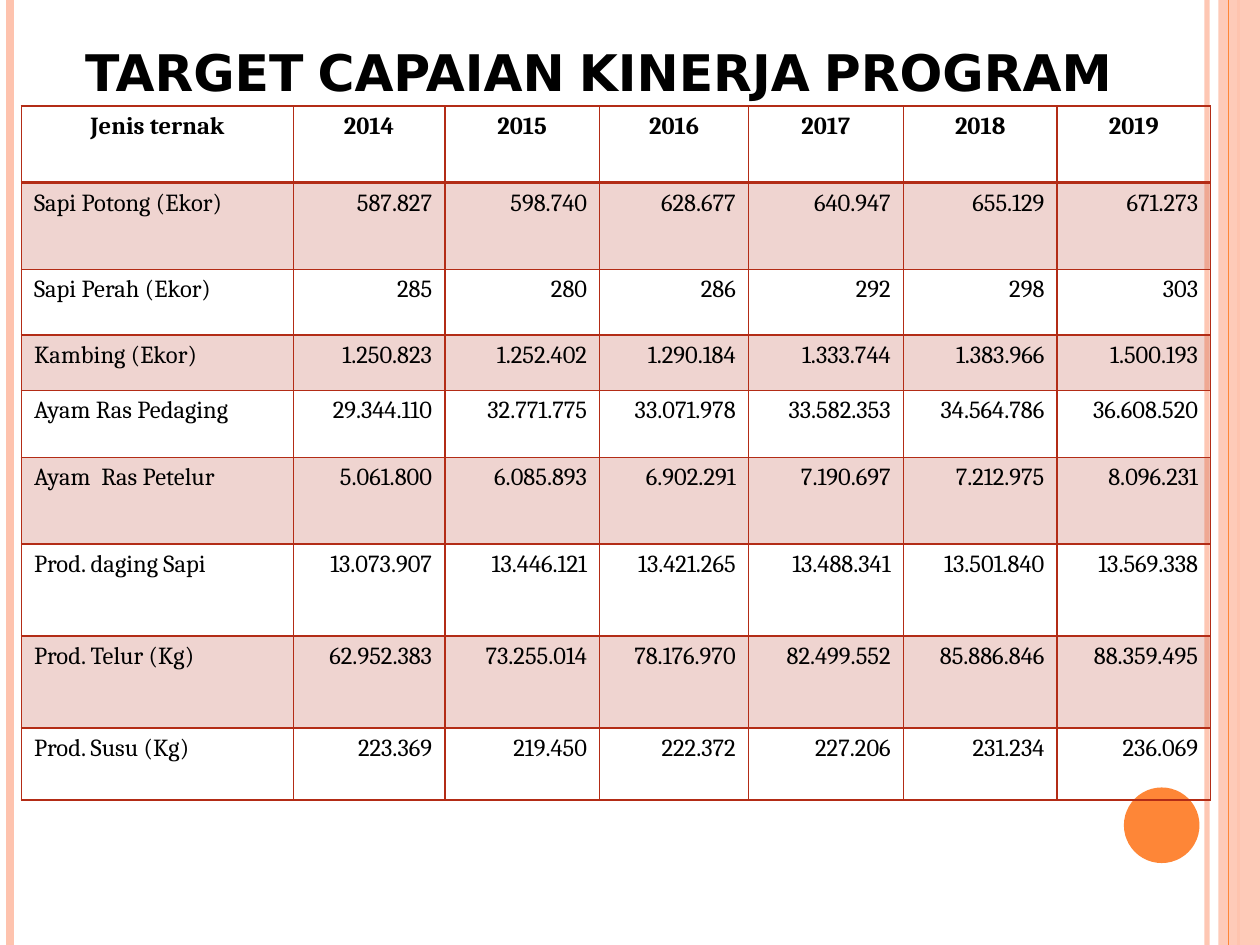
from lxml.etree import SubElement
from pptx import Presentation
from pptx.dml.color import RGBColor
from pptx.enum.shapes import MSO_CONNECTOR as CONNECTOR, MSO_SHAPE as SHAPE
from pptx.enum.text import MSO_ANCHOR as ANCHOR, PP_ALIGN as ALIGN
from pptx.oxml.ns import qn
from pptx.util import Inches, Pt

WIDTH, HEIGHT = 10, 7.5
PEACH, ORANGE, RED, BLACK = "FEC3AE", "FE8637", "B32C16", "000000"

COLUMN_WIDTHS = [2.16, 1.2, 1.23, 1.18, 1.23, 1.22, 1.22]
ROW_HEIGHTS = [0.61, 0.69, 0.52, 0.44, 0.53, 0.69, 0.73, 0.73, 0.57]
LIVESTOCK_TARGETS = [
    ["Jenis ternak", "2014", "2015", "2016", "2017", "2018", "2019"],
    ["Sapi Potong (Ekor)", "587.827", "598.740", "628.677", "640.947", "655.129", "671.273"],
    ["Sapi Perah (Ekor)", "285", "280", "286", "292", "298", "303"],
    ["Kambing (Ekor)", "1.250.823", "1.252.402", "1.290.184", "1.333.744", "1.383.966",
     "1.500.193"],
    ["Ayam Ras Pedaging", "29.344.110", "32.771.775", "33.071.978", "33.582.353", "34.564.786",
     "36.608.520"],
    ["Ayam  Ras Petelur", "5.061.800", "6.085.893", "6.902.291", "7.190.697", "7.212.975",
     "8.096.231"],
    ["Prod. daging Sapi", "13.073.907", "13.446.121", "13.421.265", "13.488.341", "13.501.840",
     "13.569.338"],
    ["Prod. Telur (Kg)", "62.952.383", "73.255.014", "78.176.970", "82.499.552", "85.886.846",
     "88.359.495"],
    ["Prod. Susu (Kg)", "223.369", "219.450", "222.372", "227.206", "231.234", "236.069"],
]


def rgb(color):
    return RGBColor.from_string(color)


def set_opacity(element, percent):
    """Make every colour inside the element partly transparent."""
    for color in element.iter(qn("a:srgbClr")):
        SubElement(color, qn("a:alpha"), val=str(percent * 1000))


def add_stripe(page, x, color, points, opacity=100):
    """Draw a vertical line over the full height of the slide."""
    stripe = page.shapes.add_connector(
        CONNECTOR.STRAIGHT, Inches(x), 0, Inches(x), Inches(HEIGHT))
    stripe.line.color.rgb = rgb(color)
    stripe.line.width = Pt(points)
    properties = stripe._element.spPr
    if opacity < 100:
        set_opacity(properties, opacity)
    SubElement(properties, qn("a:effectLst"))


def add_filled_shape(page, kind, left, top, width, height, color, opacity=100):
    shape = page.shapes.add_shape(
        kind, Inches(left), Inches(top), Inches(width), Inches(height))
    shape.shadow.inherit = False
    shape.fill.solid()
    shape.fill.fore_color.rgb = rgb(color)
    shape.line.fill.background()
    if opacity < 100:
        set_opacity(shape._element.spPr, opacity)


def style_text(para, font_name, size, bold, align):
    para.alignment = align
    for span in para.runs:
        span.font.name = font_name
        span.font.size = Pt(size)
        span.font.bold = bold
        span.font.color.rgb = rgb(BLACK)


def set_title(page, text):
    title = page.shapes.title
    title.left, title.top = 0, 0
    title.width, title.height = Inches(WIDTH * 0.95), Inches(0.86)
    frame = title.text_frame
    frame.text = text
    frame.vertical_anchor = ANCHOR.BOTTOM
    para = frame.paragraphs[0]
    style_text(para, "DejaVu Sans", 28.8, True, ALIGN.CENTER)
    para.runs[0].font._element.set("cap", "small")


def set_borders(cell, color, widths):
    """Outline a cell; widths maps L, R, T and B to points, in that order."""
    properties = cell._tc.get_or_add_tcPr()
    for position, (side, points) in enumerate(widths.items()):
        border = SubElement(properties, qn(f"a:ln{side}"), w=str(Pt(points)))
        fill = SubElement(border, qn("a:solidFill"))
        SubElement(fill, qn("a:srgbClr"), val=color)
        properties.insert(position, border)


def style_cell(cell, row, column):
    if row % 2:
        cell.fill.solid()
        cell.fill.fore_color.rgb = rgb(RED)
        set_opacity(cell._tc.tcPr, 20)
    else:
        cell.fill.background()
    top, bottom = (2 if row == 1 else 1), (2 if row == 0 else 1)
    set_borders(cell, RED, {"L": 1, "R": 1, "T": top, "B": bottom})
    if row == 0:
        align = ALIGN.CENTER
    else:
        align = ALIGN.RIGHT if column else ALIGN.LEFT
    style_text(cell.text_frame.paragraphs[0], "Cambria", 14, row == 0, align)


def add_target_table(page, left, top):
    table = page.shapes.add_table(
        len(ROW_HEIGHTS), len(COLUMN_WIDTHS), Inches(left), Inches(top),
        Inches(sum(COLUMN_WIDTHS)), Inches(sum(ROW_HEIGHTS))).table
    table.first_row = table.horz_banding = False
    for column, width in zip(table.columns, COLUMN_WIDTHS):
        column.width = Inches(width)
    for row, height in zip(table.rows, ROW_HEIGHTS):
        row.height = Inches(height)
    for row, values in enumerate(LIVESTOCK_TARGETS):
        for column, value in enumerate(values):
            cell = table.cell(row, column)
            cell.text_frame.text = value
            style_cell(cell, row, column)


def add_side_decoration(page):
    add_stripe(page, 9.58, PEACH, 3, opacity=93)
    add_stripe(page, 0.08, PEACH, 4.5)
    add_stripe(page, 9.83, PEACH, 1.5)
    add_filled_shape(page, SHAPE.RECTANGLE, 9.67, 0, 0.33, HEIGHT, PEACH, opacity=87)
    add_stripe(page, 9.75, ORANGE, 0.75)
    add_filled_shape(page, SHAPE.OVAL, 8.92, 6.25, 0.6, 0.6, ORANGE)


def main():
    deck = Presentation()
    deck.slide_width, deck.slide_height = Inches(WIDTH), Inches(HEIGHT)
    page = deck.slides.add_slide(deck.slide_layouts[5])
    add_side_decoration(page)
    set_title(page, "TARGET CAPAIAN KINERJA PROGRAM")
    add_target_table(page, 0.17, 0.84)
    deck.save("out.pptx")


if __name__ == "__main__":
    main()
